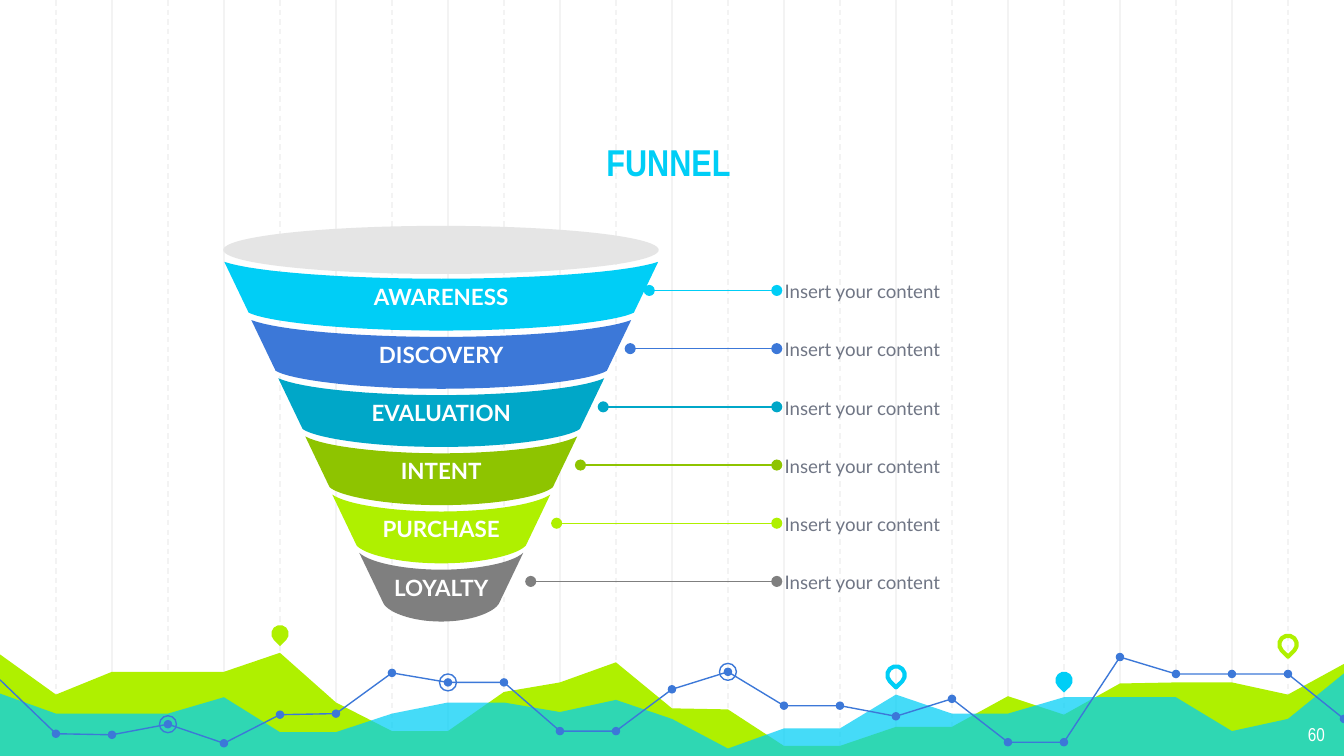
from lxml import etree
from pptx import Presentation
from pptx.dml.color import RGBColor
from pptx.enum.dml import MSO_LINE
from pptx.enum.shapes import MSO_CONNECTOR, MSO_SHAPE
from pptx.enum.text import MSO_ANCHOR, MSO_AUTO_SIZE, PP_ALIGN
from pptx.oxml.ns import qn
from pptx.util import Cm, Pt

DASH = MSO_LINE.DASH
STRAIGHT = MSO_CONNECTOR.STRAIGHT
OVAL, TEARDROP = MSO_SHAPE.OVAL, MSO_SHAPE.TEAR
TOP, MIDDLE, BOTTOM = MSO_ANCHOR.TOP, MSO_ANCHOR.MIDDLE, MSO_ANCHOR.BOTTOM
LEFT, CENTER, RIGHT = PP_ALIGN.LEFT, PP_ALIGN.CENTER, PP_ALIGN.RIGHT
NO_FIT = MSO_AUTO_SIZE.NONE

CYAN = RGBColor(0x00, 0xCE, 0xF6)
BLUE = RGBColor(0x3C, 0x78, 0xD8)
TEAL = RGBColor(0x00, 0xA7, 0xC8)
GREEN = RGBColor(0x8E, 0xC4, 0x00)
LIME = RGBColor(0xAF, 0xF0, 0x00)
GRAY = RGBColor(0x7F, 0x7F, 0x7F)
SLATE = RGBColor(0x70, 0x76, 0x85)
RIM_GRAY = RGBColor(0xE5, 0xE5, 0xE5)
GRID_GRAY = RGBColor(0xF3, 0xF3, 0xF3)
WHITE = RGBColor(0xFF, 0xFF, 0xFF)

WIDTH, HEIGHT = 25.4, 14.29
COLUMN = WIDTH / 24
BASE = 14.35

# Heights at each grid column, in centimetres from the top
LIME_HILLS = [12.37, 13.13, 12.7, 12.7, 12.7, 12.34, 13.28, 13.82, 13.82,
              13.08, 12.9, 12.52, 13.39, 13.41, 14.1, 14.1, 13.74, 13.74,
              13.16, 13.51, 12.92, 12.9, 12.9, 13.13, 12.55]
CYAN_HILLS = [13.11, 13.49, 13.49, 13.49, 13.18, 13.84, 13.84, 13.49, 13.28,
              13.28, 13.46, 13.23, 13.59, 14.15, 13.77, 13.77, 13.13, 13.49,
              13.49, 13.18, 13.18, 13.18, 13.82, 13.59, 12.73]
TREND = [12.85, 13.87, 13.89, 13.69, 14.05, 13.51, 13.49, 12.72, 12.9,
         12.9, 13.82, 13.82, 13.03, 12.7, 13.34, 13.34, 13.54, 13.21,
         14.03, 14.03, 12.42, 12.74, 12.74, 12.74, 13.59]
RING_COLUMNS = [3, 8, 13]
# Column, height, colour, filled
PINS = [(5, 11.98, LIME, True), (16, 12.76, CYAN, False),
        (19, 12.86, CYAN, True), (23, 12.18, LIME, False)]

# Name, colour, start of the callout line
STAGES = [("AWARENESS", CYAN, 12.27), ("DISCOVERY", BLUE, 11.91),
          ("EVALUATION", TEAL, 11.4), ("INTENT", GREEN, 10.97),
          ("PURCHASE", LIME, 10.52), ("LOYALTY", GRAY, 10.03)]
STAGE_STEP = 1.1
FUNNEL_CENTER = 8.34


def apply(target, values):
    for name, value in values.items():
        setattr(target, name, value)


def paint(shape, fill=None, line=None, weight=0.75):
    shape.shadow.inherit = False
    if fill is None:
        shape.fill.background()
    else:
        shape.fill.solid()
        shape.fill.fore_color.rgb = fill
    if line is None:
        shape.line.fill.background()
    else:
        shape.line.color.rgb = line
        shape.line.width = Pt(weight)


def write(shape, text, color, size, font, bold=False, align=LEFT,
          anchor=MIDDLE, margins=(0, 0)):
    """Fill a shape with one line; margins are horizontal and vertical."""
    side, edge = (Cm(margin) for margin in margins)
    frame = shape.text_frame
    frame.text = text
    apply(frame, {"word_wrap": True, "auto_size": NO_FIT,
                  "vertical_anchor": anchor, "margin_left": side,
                  "margin_right": side, "margin_top": edge,
                  "margin_bottom": edge})
    para = frame.paragraphs[0]
    para.alignment = align
    span = para.runs[0]
    apply(span.font, {"name": font, "size": Pt(size), "bold": bold})
    span.font.color.rgb = color


def add_text(page, left, top, width, height, *text, **style):
    box = page.shapes.add_textbox(Cm(left), Cm(top), Cm(width), Cm(height))
    write(box, *text, **style)


def add_line(page, start, end, color):
    line = page.shapes.add_connector(STRAIGHT, *map(Cm, start + end))
    line.line.color.rgb = color
    line.line.width = Pt(0.75)
    etree.SubElement(line.element.spPr, qn("a:effectLst"))
    return line


def add_outline(page, points, close=True, **look):
    points = [(Cm(x), Cm(y)) for x, y in points]
    builder = page.shapes.build_freeform(*points[0])
    builder.add_line_segments(points[1:], close=close)
    outline = builder.convert_to_shape()
    paint(outline, **look)
    return outline


def add_centered(page, kind, x, y, size, **look):
    shape = page.shapes.add_shape(kind, Cm(x - size / 2), Cm(y - size / 2),
                                  Cm(size), Cm(size))
    paint(shape, **look)
    return shape


def on_columns(heights):
    return [(i * COLUMN, y) for i, y in enumerate(heights)]


def add_hills(page, heights, color):
    corners = [(WIDTH, BASE), (0, BASE)]
    return add_outline(page, on_columns(heights) + corners, fill=color)


def add_grid(page):
    for i in range(1, 24):
        line = add_line(page, (i * COLUMN, 0), (i * COLUMN, BASE), GRID_GRAY)
        if i % 2:
            line.line.dash_style = DASH


def add_landscape(page):
    add_hills(page, LIME_HILLS, LIME)
    front = add_hills(page, CYAN_HILLS, CYAN)
    tint = front.element.spPr.find(qn("a:solidFill"))[0]
    etree.SubElement(tint, qn("a:alpha"), val="73000")

    points = on_columns(TREND)
    add_outline(page, points, close=False, line=BLUE)
    for x, y in points[1:]:
        add_centered(page, OVAL, x, y, 0.16, fill=BLUE)
    for i in RING_COLUMNS:
        add_centered(page, OVAL, *points[i], 0.32, line=BLUE)
    for column, y, color, filled in PINS:
        look = {"fill": color} if filled else {"line": color, "weight": 2.25}
        pin = add_centered(page, TEARDROP, column * COLUMN, y, 0.33, **look)
        pin.rotation = 135


def sagging_curve(half_width, top, depth, first, second):
    """Points from left to right; the controls are shares of width and depth."""
    steps = [i / 16 for i in range(17)]
    controls = [(1, 0), first, second, (0, 1)]
    left = []
    for t in steps:
        weights = [(1 - t) ** 3, 3 * t * (1 - t) ** 2, 3 * t * t * (1 - t), t ** 3]
        x, y = (sum(w * c[axis] for w, c in zip(weights, controls))
                for axis in (0, 1))
        left.append((x * half_width, top + y * depth))
    return ([(FUNNEL_CENTER - x, y) for x, y in left]
            + [(FUNNEL_CENTER + x, y) for x, y in left[-2::-1]])


def add_funnel(page):
    for i, (name, color, _) in enumerate(STAGES):
        half_width = 4.1 - 0.51 * i
        top = 4.95 + STAGE_STEP * i
        upper = sagging_curve(half_width, top, 0.32, (0.86, 0.62), (0.42, 1))
        lower = sagging_curve(half_width - 0.46, top + 0.96, 0.34,
                              (0.92, 0.46), (0.53, 1))
        band = add_outline(page, upper + lower[::-1], fill=color)
        write(band, name, WHITE, 12, "Lato", bold=True, align=CENTER,
              margins=(0.18, 0.1))
    rim = page.shapes.add_shape(OVAL, Cm(4.22), Cm(4.27), Cm(8.23), Cm(0.91))
    paint(rim, fill=RIM_GRAY)


def add_callouts(page):
    for i, (_, color, start) in enumerate(STAGES):
        y = 5.49 + STAGE_STEP * i
        line = add_line(page, (start, y), (14.68, y), color)
        stroke = line.line._get_or_add_ln()
        for end in ("a:headEnd", "a:tailEnd"):
            etree.SubElement(stroke, qn(end), type="oval")
        add_text(page, 14.83, y - 0.38, 6.35, 0.79,
                 "Insert your content", SLATE, 10, "Lato")


def add_title(page):
    title = page.shapes.title
    apply(title, {"left": Cm(2.92), "top": Cm(1.75),
                  "width": Cm(19.43), "height": Cm(1.98)})
    write(title, "FUNNEL", CYAN, 20, "Arial Narrow", bold=True,
          align=CENTER, anchor=BOTTOM, margins=(0.25, 0.25))
    page.shapes.element.append(title.element)  # in front of the grid


def main():
    deck = Presentation()
    apply(deck, {"slide_width": Cm(WIDTH), "slide_height": Cm(HEIGHT)})
    page = deck.slides.add_slide(deck.slide_layouts[5])
    add_grid(page)
    add_landscape(page)
    add_title(page)
    add_text(page, 23.77, 13.41, 1.52, 0.89, "60", WHITE, 10, "Arial Narrow",
             align=RIGHT, anchor=TOP, margins=(0.25, 0.25))
    add_funnel(page)
    add_callouts(page)
    deck.save("out.pptx")


if __name__ == "__main__":
    main()
